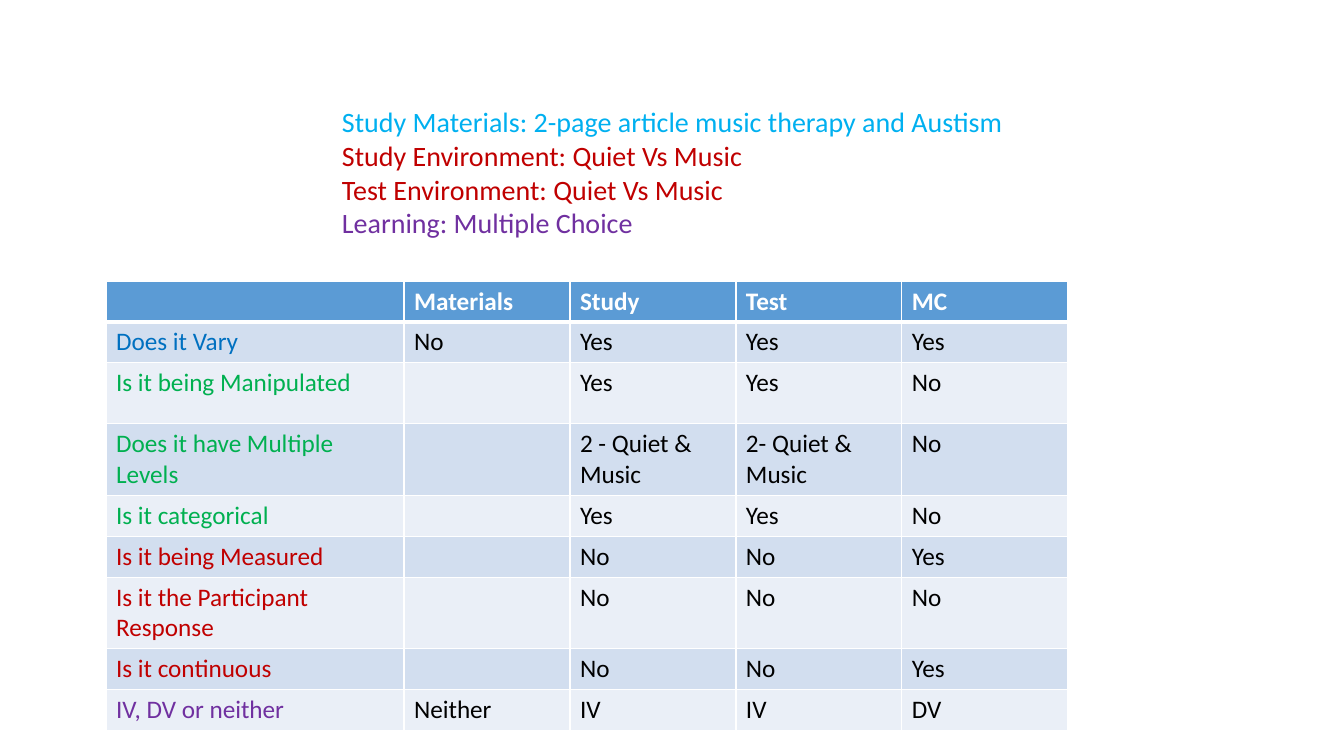
import pptx
import pptx.dml.color
import pptx.enum.text
import pptx.oxml
import pptx.oxml.ns
import pptx.util

PX = 914400 / 100.8
FONT = "Calibri"
WHITE, BLACK = "FFFFFF", "000000"
SKY, BLUE, GREEN, RED, PURPLE = "00B0F0", "0070C0", "00B050", "C00000", "7030A0"
HEADER_FILL, BAND_FILLS = "5B9BD5", ("EAEFF7", "D2DEEF")

STUDY_LINES = [
    ("Study Materials: 2-page article music therapy and Austism", SKY),
    ("Study Environment: Quiet Vs Music", RED),
    ("Test Environment: Quiet Vs Music", RED),
    ("Learning: Multiple Choice", PURPLE),
]
HEADINGS = ["", "Materials", "Study", "Test", "MC"]
LOW, TALL = 35, 61
# Label colour, row height, cell texts
QUESTIONS = [
    (BLUE, LOW, ["Does it Vary", "No", "Yes", "Yes", "Yes"]),
    (GREEN, TALL, ["Is it being Manipulated", "", "Yes", "Yes", "No"]),
    (GREEN, TALL, ["Does it have Multiple Levels", "", "2 - Quiet & Music", "2- Quiet & Music", "No"]),
    (GREEN, LOW, ["Is it categorical", "", "Yes", "Yes", "No"]),
    (RED, LOW, ["Is it being Measured", "", "No", "No", "Yes"]),
    (RED, TALL, ["Is it the Participant Response", "", "No", "No", "No"]),
    (RED, LOW, ["Is it continuous", "", "No", "No", "Yes"]),
    (PURPLE, LOW, ["IV, DV or neither", "Neither", "IV", "IV", "DV"]),
]
COLUMN_WIDTHS = [298, 166, 166, 166, 166]


def px(n):
    return pptx.util.Emu(round(n * PX))


def rgb(value):
    return pptx.dml.color.RGBColor.from_string(value)


def add_run(p, text, color, **formats):
    r = p.add_run()
    r.text = text
    r.font.color.rgb = rgb(color)
    for name, value in {"name": FONT, **formats}.items():
        setattr(r.font, name, value)


def add_text(s, left, top, width, height, lines):
    tf = s.shapes.add_textbox(px(left), px(top), px(width), px(height)).text_frame
    tf.word_wrap = True
    tf.auto_size = pptx.enum.text.MSO_AUTO_SIZE.SHAPE_TO_FIT_TEXT
    for i, (text, color) in enumerate(lines):
        p = tf.add_paragraph() if i else tf.paragraphs[0]
        add_run(p, text, color, size=pptx.util.Pt(20))


def set_borders(cell, color, widths):
    """Draw cell edges; widths maps L, R, T and B to points."""
    tc_pr = cell._tc.get_or_add_tcPr()
    for side, width in widths.items():
        tc_pr.append(pptx.oxml.parse_xml(
            f'<a:ln{side} {pptx.oxml.ns.nsdecls("a")} w="{pptx.util.Pt(width)}">'
            f'<a:solidFill><a:srgbClr val="{color}"/></a:solidFill></a:ln{side}>'))


def fill_cell(cell, text, color, fill, bold, top, bottom):
    set_borders(cell, WHITE, {"L": 1, "R": 1, "T": top, "B": bottom})
    cell.fill.solid()
    cell.fill.fore_color.rgb = rgb(fill)
    if text:
        add_run(cell.text_frame.paragraphs[0], text, color,
                size=pptx.util.Pt(18), bold=bold)


def add_question_table(s, left, top, height):
    rows = [(WHITE, LOW, HEADINGS)] + QUESTIONS
    frame = s.shapes.add_table(len(rows), len(HEADINGS), px(left), px(top),
                               px(sum(COLUMN_WIDTHS)), px(height))
    table = frame.table
    for column, width in zip(table.columns, COLUMN_WIDTHS):
        column.width = px(width)
    for i, (label_color, row_height, texts) in enumerate(rows):
        table.rows[i].height = px(row_height)
        header = i == 0
        for j, text in enumerate(texts):
            color = label_color if header or j == 0 else BLACK
            fill = HEADER_FILL if header else BAND_FILLS[i % 2]
            fill_cell(table.cell(i, j), text, color, fill, header,
                      3 if i == 1 else 1, 3 if header else 1)
    frame.height = px(height)


def main():
    prs = pptx.Presentation()
    prs.slide_width, prs.slide_height = px(1344), px(756)
    s = prs.slides.add_slide(prs.slide_layouts[6])
    add_question_table(s, 106, 281, 445)
    add_text(s, 332, 100, 767, 146, STUDY_LINES)
    prs.save("out.pptx")


if __name__ == "__main__":
    main()
